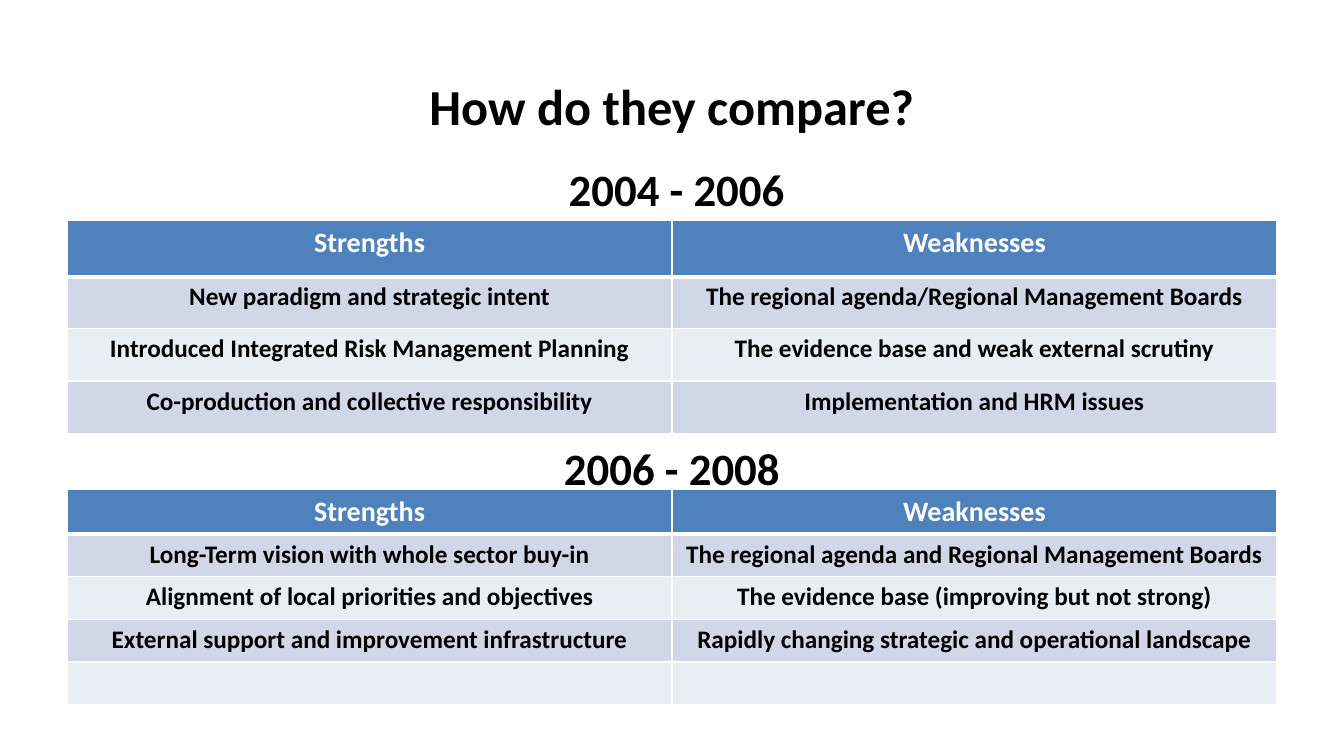
import pptx
import pptx.dml.color
import pptx.enum.text
import pptx.oxml
import pptx.oxml.ns
import pptx.util

RGBColor = pptx.dml.color.RGBColor
BLACK = RGBColor(0x00, 0x00, 0x00)
WHITE = RGBColor(0xFF, 0xFF, 0xFF)
HEADER_BLUE = RGBColor(0x4F, 0x81, 0xBD)
BAND_DARK = RGBColor(0xD0, 0xD8, 0xE8)
BAND_LIGHT = RGBColor(0xE9, 0xED, 0xF4)

TABLE_LEFT, TABLE_WIDTH = 5, 90
TITLE_ONLY = 5

EARLY_PERIOD = [
    ("Strengths", "Weaknesses"),
    ("New paradigm and strategic intent", "The regional agenda/Regional Management Boards"),
    ("Introduced Integrated Risk Management Planning", "The evidence base and weak external scrutiny"),
    ("Co-production and collective responsibility", "Implementation and HRM issues"),
]
LATE_PERIOD = [
    ("Strengths", "Weaknesses"),
    ("Long-Term vision with whole sector buy-in", "The regional agenda and Regional Management Boards"),
    ("Alignment of local priorities and objectives", "The evidence base (improving but not strong)"),
    ("External support and improvement infrastructure", "Rapidly changing strategic and operational landscape"),
    ("", ""),
]


class ComparisonSlide:
    """Places elements by percentages of the slide's width and height."""

    font_name = "Calibri"

    def __init__(self, prs):
        self.width, self.height = prs.slide_width, prs.slide_height
        self.slide = prs.slides.add_slide(prs.slide_layouts[TITLE_ONLY])

    def x(self, percent):
        return round(self.width * percent / 100)

    def y(self, percent):
        return round(self.height * percent / 100)

    def box(self, left, top, width, height):
        return self.x(left), self.y(top), self.x(width), self.y(height)

    def set_text(self, tf, text, size, color=BLACK):
        p = tf.paragraphs[0]
        p.text = text
        p.alignment = pptx.enum.text.PP_ALIGN.CENTER
        p.font.name = self.font_name
        p.font.size = pptx.util.Pt(size)
        p.font.bold = True
        p.font.color.rgb = color

    def title(self, text, *box):
        sp = self.slide.shapes.title
        sp.left, sp.top, sp.width, sp.height = self.box(*box)
        sp.text_frame.vertical_anchor = pptx.enum.text.MSO_ANCHOR.MIDDLE
        self.set_text(sp.text_frame, text, 36)

    def heading(self, text, *box):
        tf = self.slide.shapes.add_textbox(*self.box(*box)).text_frame
        tf.word_wrap = True
        tf.auto_size = pptx.enum.text.MSO_AUTO_SIZE.SHAPE_TO_FIT_TEXT
        self.set_text(tf, text, 32)

    def border(self, cell, row):
        """Draw white cell borders, thicker between the header and the body."""
        tc_pr = cell._tc.get_or_add_tcPr()
        thick_side = {0: "B", 1: "T"}.get(row)
        for side in "LRTB":
            width = pptx.util.Pt(3 if side == thick_side else 1)
            tc_pr.append(pptx.oxml.parse_xml(
                f'<a:ln{side} {pptx.oxml.ns.nsdecls("a")} w="{width}"><a:solidFill>'
                f'<a:srgbClr val="{WHITE}"/></a:solidFill></a:ln{side}>'))

    def table(self, rows, top, header_height, row_height):
        height = header_height + row_height * (len(rows) - 1)
        frame = self.slide.shapes.add_table(
            len(rows), len(rows[0]), *self.box(TABLE_LEFT, top, TABLE_WIDTH, height))
        table = frame.table
        for r, texts in enumerate(rows):
            table.rows[r].height = self.y(row_height if r else header_height)
            if r == 0:
                fill, size, color = HEADER_BLUE, 20, WHITE
            else:
                fill, size, color = BAND_DARK if r % 2 else BAND_LIGHT, 18, BLACK
            for c, text in enumerate(texts):
                cell = table.cell(r, c)
                self.border(cell, r)
                cell.fill.solid()
                cell.fill.fore_color.rgb = fill
                self.set_text(cell.text_frame, text, size, color)


def main():
    prs = pptx.Presentation()
    prs.slide_width = pptx.util.Inches(13.33)
    prs.slide_height = pptx.util.Inches(7.5)
    s = ComparisonSlide(prs)
    s.title("How do they compare?", TABLE_LEFT, 7.1, TABLE_WIDTH, 13.6)
    s.table(EARLY_PERIOD, 29.2, 7.4, 6.9)
    s.table(LATE_PERIOD, 64.8, 5.63, 5.63)
    s.heading("2004 - 2006", 39.6, 20.7, 21.5, 8.5)
    s.heading("2006 - 2008", 37.3, 57.6, 25.4, 8.5)
    prs.save("out.pptx")


if __name__ == "__main__":
    main()
